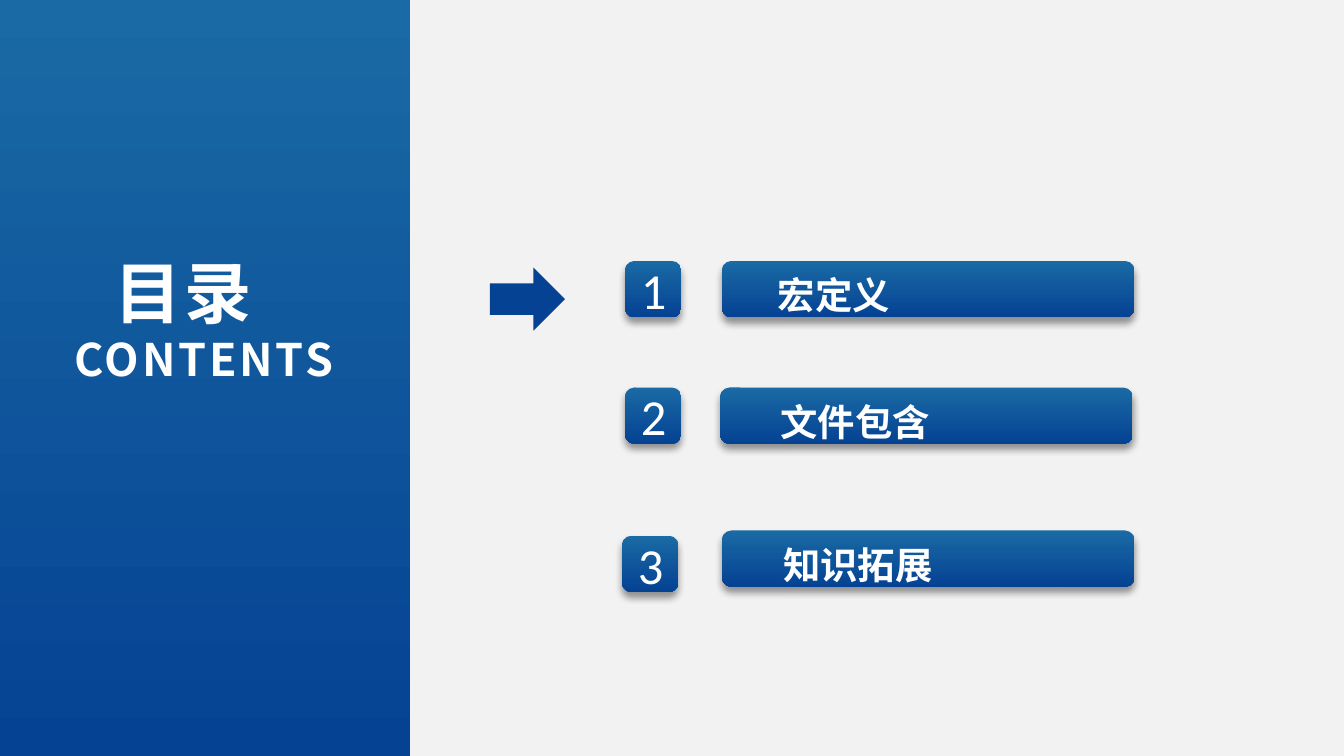
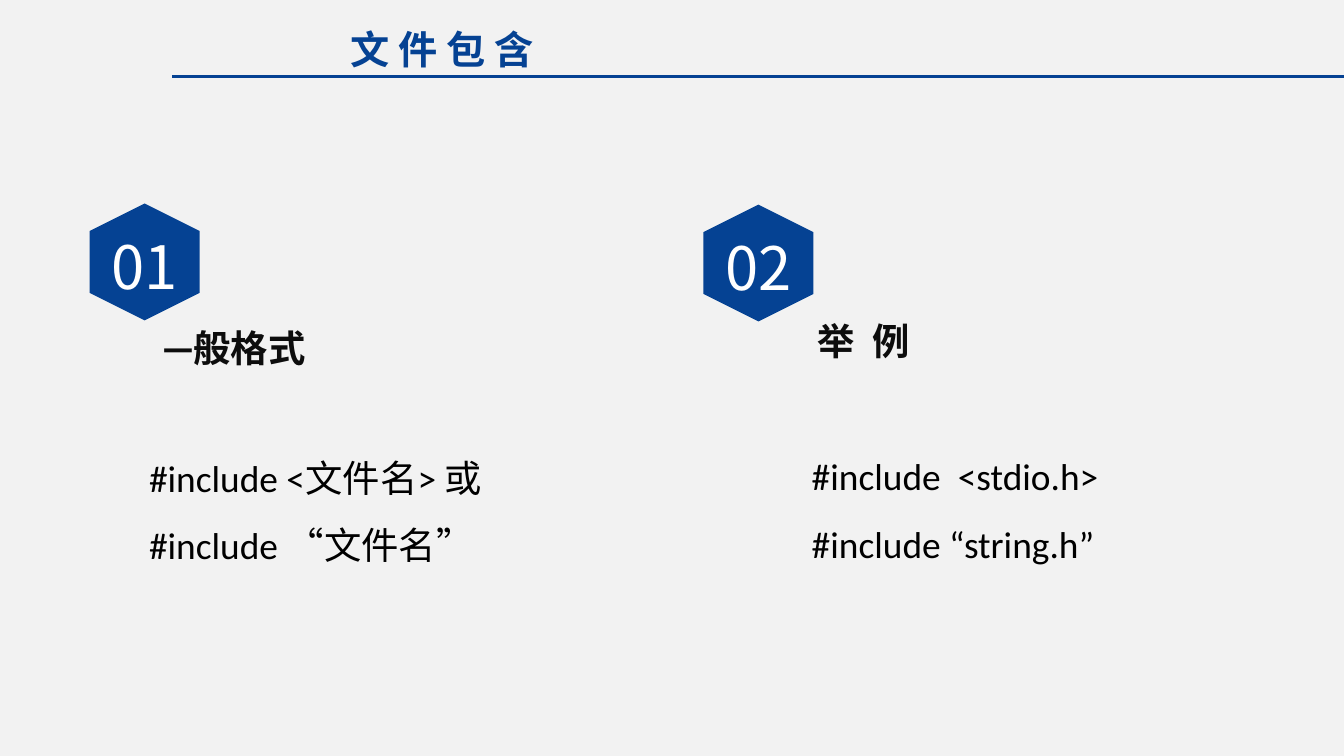
from lxml.etree import SubElement
from pptx import Presentation
from pptx.dml.color import RGBColor
from pptx.enum.shapes import MSO_CONNECTOR, MSO_SHAPE
from pptx.enum.text import MSO_ANCHOR, MSO_AUTO_SIZE, PP_ALIGN
from pptx.oxml.ns import qn
from pptx.util import Pt

COLORS = {"back": "F2F2F2", "light": "1A6AA5", "blue": "054293",
          "white": "FFFFFF", "black": "000000", "ink": "0D0D0D"}
LATIN, HAN = "Calibri", "Noto Sans CJK SC"
WIDE, HIGH = 720, 405


def tint(name):
    """Return the named colour."""
    return RGBColor.from_string(COLORS[name])


def place(shape, box):
    """Move a shape to a box of points."""
    shape.left, shape.top, shape.width, shape.height = map(Pt, box)


def style(para, size, color, font=LATIN, bold=False, align=None, space=0):
    """Set the font, alignment and letter spacing of a paragraph."""
    para.alignment = align
    para.font.size = Pt(size)
    para.font.bold = bold
    para.font.color.rgb = tint(color)
    para.font.name = font
    props = para._p.pPr.find(qn("a:defRPr"))
    SubElement(props, qn("a:ea")).set("typeface", HAN)
    if space:
        props.set("spc", str(int(space * 100)))


def add_text(shapes, box, wrap=True):
    """Add a text box and return its frame."""
    frame = shapes.add_textbox(*map(Pt, box)).text_frame
    frame.word_wrap = wrap
    frame.auto_size = MSO_AUTO_SIZE.SHAPE_TO_FIT_TEXT
    return frame


def add_label(shapes, box, text, size, color, wrap=True, **look):
    """Add a text box with one line."""
    frame = add_text(shapes, box, wrap)
    frame.text = text
    style(frame.paragraphs[0], size, color, **look)
    return frame


def add_title(slide, box, lines):
    """Place the title in front and return its paragraphs."""
    title = slide.shapes.title
    slide.shapes._spTree.append(title._element)
    place(title, box)
    frame = title.text_frame
    frame.word_wrap = True
    frame.auto_size = MSO_AUTO_SIZE.SHAPE_TO_FIT_TEXT
    frame.vertical_anchor = MSO_ANCHOR.TOP
    frame.text = "\n".join(lines)
    return frame.paragraphs


def add_block(shapes, kind, box, fade=False):
    """Add a borderless blue shape, plain or with a gradient."""
    shape = shapes.add_shape(kind, *map(Pt, box))
    shape.shadow.inherit = False
    shape.line.fill.background()
    if fade:
        shape.fill.gradient()
        shape.fill.gradient_angle = 270
        for stop, name in zip(shape.fill.gradient_stops, ("light", "blue")):
            stop.color.rgb = tint(name)
    else:
        shape.fill.solid()
        shape.fill.fore_color.rgb = tint("blue")
    return shape


def add_button(shapes, box):
    """Add a rounded gradient button with a soft shadow."""
    shape = add_block(shapes, MSO_SHAPE.ROUNDED_RECTANGLE, box, True)
    effects = shape._element.spPr.find(qn("a:effectLst"))
    shade = SubElement(effects, qn("a:outerShdw"), blurRad=str(Pt(4)),
                       dist=str(Pt(3)), dir="5400000", rotWithShape="0")
    color = SubElement(shade, qn("a:srgbClr"), val=COLORS["black"])
    SubElement(color, qn("a:alpha"), val="40000")
    return shape


def add_side(slide, box):
    """Build the side panel with the contents title."""
    left, top, wide, high = box
    add_block(slide.shapes, MSO_SHAPE.RECTANGLE, box, True)
    head, sub = add_title(slide, (left + 20.2, top + 131, 165.6, 80),
                          ("目录 ", "CONTENTS"))
    style(head, 36, "white", HAN, True, PP_ALIGN.CENTER, 1.5)
    style(sub, 24, "white", HAN, True, PP_ALIGN.RIGHT, 1.5)


def add_entry(slide, num, text, spot, bar, inset, wide):
    """Build one numbered entry and its bar."""
    side = 30.2
    button = add_button(slide.shapes, (*spot, side, side))
    frame = button.text_frame
    frame.text = str(num)
    frame.vertical_anchor = MSO_ANCHOR.MIDDLE
    style(frame.paragraphs[0], 27, "white", align=PP_ALIGN.CENTER)
    group = slide.shapes.add_group_shape()
    left, top = bar
    add_button(group.shapes, (left, top, 221, side))
    add_label(group.shapes, (left + inset, top + 2.6, wide, 31.5), text,
              20, "white", font=HAN, bold=True)


def add_menu(slide):
    """Build the contents slide."""
    add_side(slide, (0, 0, 219.6, HIGH))
    entries = (
        ("宏定义", (334.8, 139.8), (386.8, 139.8), 22.8, 196.6),
        ("文件包含", (334.8, 207.6), (385.8, 207.6), 25.2, 156.2),
        ("知识拓展", (333.2, 287), (386.8, 284.2), 25.6, 156.2))
    for num, entry in enumerate(entries, 1):
        add_entry(slide, num, *entry)
    add_block(slide.shapes, MSO_SHAPE.RIGHT_ARROW, (262.4, 143.4, 40.3, 33.8))


def add_head(slide, box, text):
    """Build the slide title and the rule under it."""
    left, top, wide, high = box
    para, = add_title(slide, box, (text,))
    style(para, 21, "blue", HAN, True, PP_ALIGN.CENTER)
    level = Pt(top + 31)
    rule = slide.shapes.add_connector(MSO_CONNECTOR.STRAIGHT, Pt(left - 10),
                                      level, Pt(WIDE), level)
    rule.line.color.rgb = tint("blue")
    rule.line.width = Pt(2)
    SubElement(rule._element.spPr, qn("a:effectLst"))


def add_part(slide, spot, num):
    """Build a numbered hexagon."""
    left, top = spot
    badge = add_block(slide.shapes, MSO_SHAPE.HEXAGON, (left, top, 62.6, 59))
    badge.rotation = 270
    add_label(slide.shapes, (left + 6.5, top + 8.6, 52.6, 46), num, 32,
              "white", wrap=False, font=HAN)


def add_code(slide, spot, lines):
    """Build code lines, each a list of runs with letter spacing."""
    frame = add_text(slide.shapes, (*spot, 232.6, 75.6))
    for index, line in enumerate(lines):
        para = frame.add_paragraph() if index else frame.paragraphs[0]
        para.line_spacing = 1.5
        style(para, 20, "black")
        for text, space in line:
            run = para.add_run()
            run.text = text
            if space:
                run._r.get_or_add_rPr().set("spc", str(int(space * 100)))


def add_topic(slide):
    """Build the slide on including files."""
    add_head(slide, (102.2, 10, 274.4, 32.4), "文 件 包 含 ")
    add_part(slide, (46.2, 110.8), "01")
    add_code(slide, (72.8, 228.2), (
        [("#include <文件名> 或", 0)], [("#include “文件名”", 0)]))
    add_part(slide, (375, 111.4), "02")
    add_code(slide, (427.8, 227.4), (
        [("#include", 0), (" ", 4.5), ("<stdio.h>", 0)],
        [("#include “string.h”", 0)]))
    frame = add_label(slide.shapes, (422, 167, 221.8, 31.5), "举 例", 20,
                      "ink", bold=True, space=2.25)
    frame.margin_left = Pt(16.2)
    frame = add_label(slide.shapes, (80.6, 170.6, 221.8, 31.5), "一", 20,
                      "ink", bold=True)
    para = frame.paragraphs[0]
    para.runs[0].font.size = Pt(16)
    para.add_run().text = "般格式"


def main():
    """Build and save the slides."""
    deck = Presentation()
    deck.slide_width, deck.slide_height = Pt(WIDE), Pt(HIGH)
    fill = deck.slide_master.background.fill
    fill.solid()
    fill.fore_color.rgb = tint("back")
    for build in (add_menu, add_topic):
        build(deck.slides.add_slide(deck.slide_layouts[5]))
    deck.save("out.pptx")


if __name__ == "__main__":
    main()
